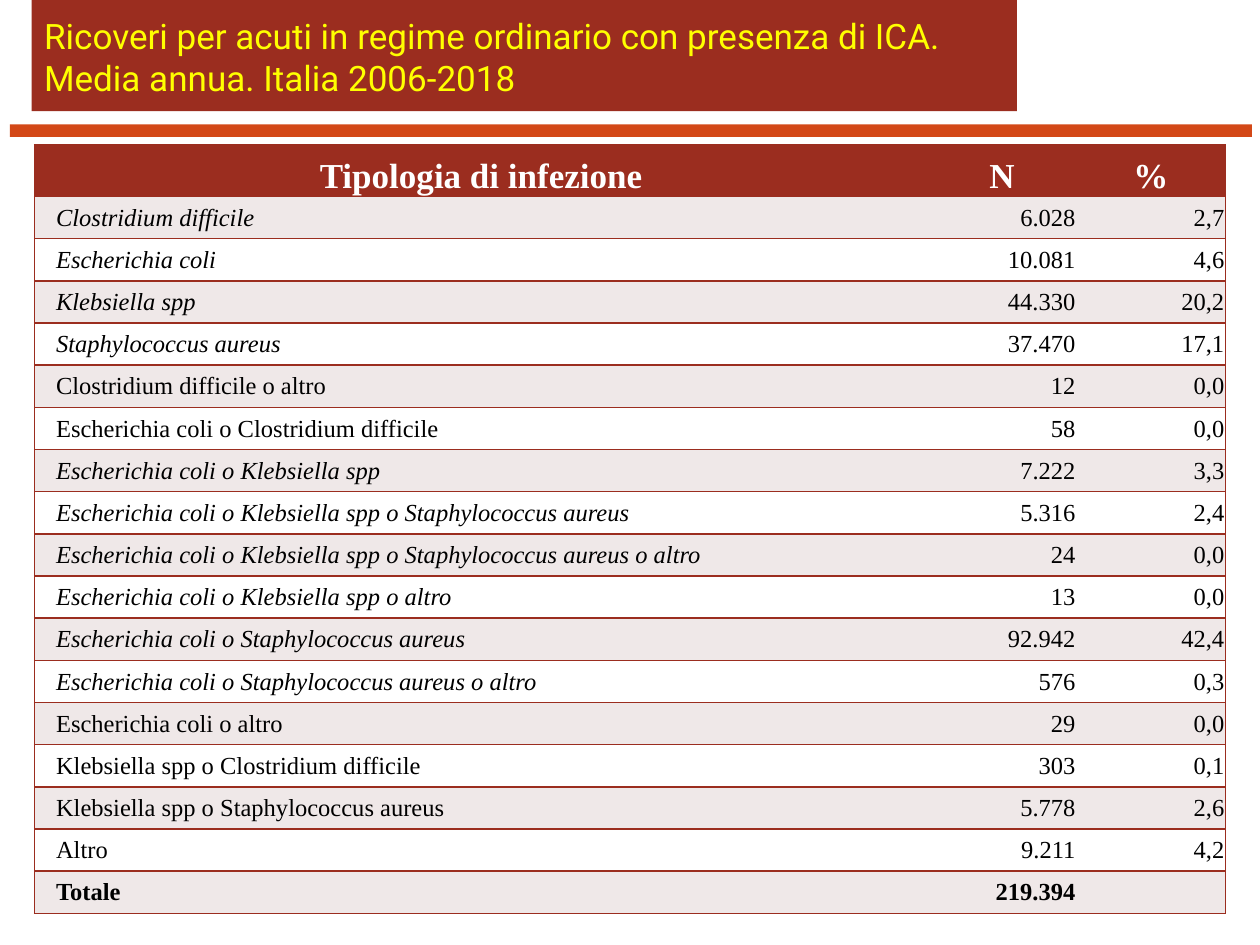
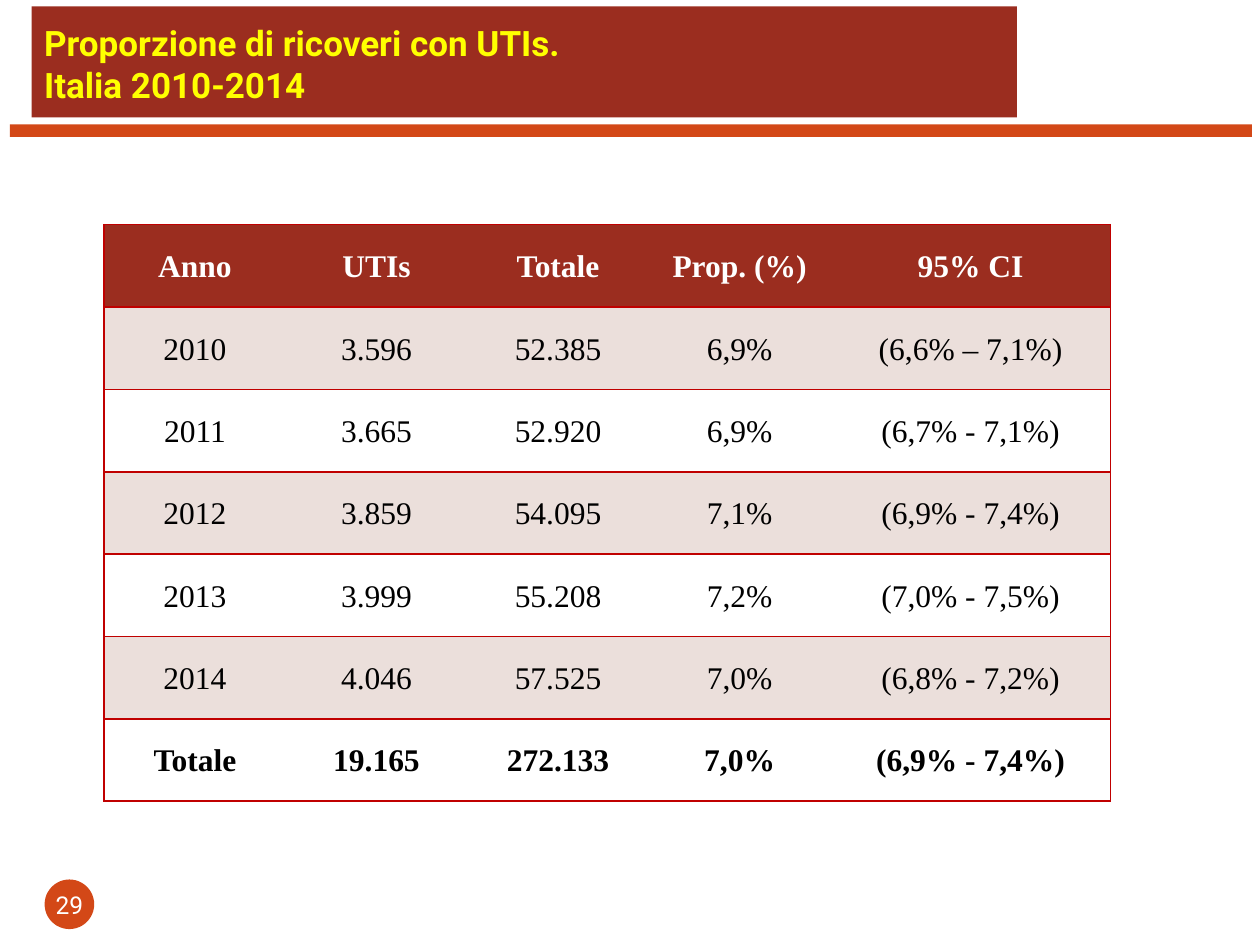
from lxml import etree
from pptx import Presentation
from pptx.dml.color import RGBColor
from pptx.enum.shapes import MSO_SHAPE as SHAPE
from pptx.enum.text import MSO_ANCHOR as ANCHOR, PP_ALIGN as ALIGN
from pptx.oxml.ns import qn
from pptx.util import Cm, Pt

BRICK, ORANGE, YELLOW = "9B2D1F", "D34817", "FFFF00"
RED, WHITE, BLACK = "C00000", "FFFFFF", "000000"
SANS, SERIF = "Roboto", "Times New Roman"

INFECTIONS = [
    ("Tipologia di infezione", "N", "%"),
    ("Clostridium difficile", "6.028", "2,7"),
    ("Escherichia coli", "10.081", "4,6"),
    ("Klebsiella spp", "44.330", "20,2"),
    ("Staphylococcus aureus", "37.470", "17,1"),
    ("Clostridium difficile o altro", "12", "0,0"),
    ("Escherichia coli o Clostridium difficile", "58", "0,0"),
    ("Escherichia coli o Klebsiella spp", "7.222", "3,3"),
    ("Escherichia coli o Klebsiella spp o Staphylococcus aureus", "5.316", "2,4"),
    ("Escherichia coli o Klebsiella spp o Staphylococcus aureus o altro", "24", "0,0"),
    ("Escherichia coli o Klebsiella spp o altro", "13", "0,0"),
    ("Escherichia coli o Staphylococcus aureus", "92.942", "42,4"),
    ("Escherichia coli o Staphylococcus aureus o altro", "576", "0,3"),
    ("Escherichia coli o altro", "29", "0,0"),
    ("Klebsiella spp o Clostridium difficile", "303", "0,1"),
    ("Klebsiella spp o Staphylococcus aureus", "5.778", "2,6"),
    ("Altro", "9.211", "4,2"),
    ("Totale", "219.394", ""),
]
ITALIC_ROWS = {*range(1, 5), *range(7, 13)}

UTIS = [
    ("Anno", "UTIs", "Totale", "Prop. (%)", "95% CI"),
    ("2010", "3.596", "52.385", "6,9%", "(6,6% – 7,1%)"),
    ("2011", "3.665", "52.920", "6,9%", "(6,7% - 7,1%)"),
    ("2012", "3.859", "54.095", "7,1%", "(6,9% - 7,4%)"),
    ("2013", "3.999", "55.208", "7,2%", "(7,0% - 7,5%)"),
    ("2014", "4.046", "57.525", "7,0%", "(6,8% - 7,2%)"),
    ("Totale", "19.165", "272.133", "7,0%", "(6,9% - 7,4%)"),
]


def rgb(color):
    return RGBColor.from_string(color)


def format_runs(p, size, color, font, bold=False, italic=False):
    for r in p.runs:
        f = r.font
        f.size, f.name, f.bold, f.italic = Pt(size), font, bold, italic
        f.color.rgb = rgb(color)


def set_margins(box, left, top, right, bottom):
    """Set the insets of a text frame or a table cell, in cm."""
    box.margin_left, box.margin_top = Cm(left), Cm(top)
    box.margin_right, box.margin_bottom = Cm(right), Cm(bottom)


def add_block(s, shape, fill, left, top, width, height):
    sp = s.shapes.add_shape(shape, Cm(left), Cm(top), Cm(width), Cm(height))
    sp.shadow.inherit = False
    sp.fill.solid()
    sp.fill.fore_color.rgb = rgb(fill)
    sp.line.fill.background()
    return sp


def add_title_slide(prs, title, title_top, bold):
    """Add a slide with the orange rule and the title band."""
    s = prs.slides.add_slide(prs.slide_layouts[6])
    add_block(s, SHAPE.RECTANGLE, ORANGE, 0.2, 2.51, 25.04, 0.25)
    tf = add_block(s, SHAPE.RECTANGLE, BRICK, 0.64, title_top, 19.86, 2.24).text_frame
    set_margins(tf, 0.25, 0.13, 0.25, 0.25)
    tf.word_wrap = True
    tf.vertical_anchor = ANCHOR.BOTTOM
    tf.text = title
    p = tf.paragraphs[0]
    p.alignment = ALIGN.LEFT
    format_runs(p, 20, YELLOW, SANS, bold)
    return s


def set_borders(cell, **colors):
    """Draw the sides L, R, T, B in the given colours; None hides a side."""
    tcPr = cell._tc.get_or_add_tcPr()
    for side in "LRTB":
        ln = etree.SubElement(tcPr, qn(f"a:ln{side}"), w=str(Pt(1)))
        if colors[side]:
            fill = etree.SubElement(ln, qn("a:solidFill"))
            etree.SubElement(fill, qn("a:srgbClr"), val=colors[side])
        else:
            etree.SubElement(ln, qn("a:noFill"))


def add_grid(s, left, top, widths, heights, rows, stripe, rule):
    """Add a table with a dark header, striped rows, and no inner vertical lines."""
    table = s.shapes.add_table(len(rows), len(widths), Cm(left), Cm(top),
                               Cm(sum(widths)), Cm(sum(heights))).table
    for col, width in zip(table.columns, widths):
        col.width = Cm(width)
    last = len(widths) - 1
    for i, (row, height, texts) in enumerate(zip(table.rows, heights, rows)):
        row.height = Cm(height)
        for j, (cell, text) in enumerate(zip(row.cells, texts)):
            set_borders(cell, L=None if j else rule, R=rule if j == last else None,
                        T=rule, B=rule)
            cell.fill.solid()
            cell.fill.fore_color.rgb = rgb(BRICK if i == 0 else stripe if i % 2 else WHITE)
            cell.vertical_anchor = ANCHOR.MIDDLE
            cell.text = text
            cell.text_frame.paragraphs[0].alignment = ALIGN.CENTER
    return table


def add_infection_table(s, left, top):
    heights = [1.04] + [0.85] * (len(INFECTIONS) - 1)
    table = add_grid(s, left, top, [18, 3, 3], heights, INFECTIONS, "EFE8E8", BRICK)
    for i, row in enumerate(table.rows):
        for j, cell in enumerate(row.cells):
            p = cell.text_frame.paragraphs[0]
            set_margins(cell, 0.02, 0.02, 0.02, 0)
            if i == 0:
                cell.vertical_anchor = ANCHOR.BOTTOM
                format_runs(p, 20, WHITE, SERIF, bold=True)
                continue
            if j == 0:
                cell.margin_left = Cm(0.43)
            p.alignment = ALIGN.RIGHT if j else ALIGN.LEFT
            format_runs(p, 14, BLACK, SERIF, bold=i == len(INFECTIONS) - 1,
                        italic=j == 0 and i in ITALIC_ROWS)


def add_uti_table(s, left, top):
    heights = [1.66] * len(UTIS)
    table = add_grid(s, left, top, [3.66] * 4 + [5.65], heights, UTIS, "EBDFDB", RED)
    for i, row in enumerate(table.rows):
        for cell in row.cells:
            set_margins(cell, 0.13, 0, 0.13, 0)
            p = cell.text_frame.paragraphs[0]
            p.line_spacing = 1.07
            format_runs(p, 18, BLACK if i else WHITE, SERIF,
                        bold=i in (0, len(UTIS) - 1))


def add_page_number(s, number, left, top):
    tf = add_block(s, SHAPE.OVAL, ORANGE, left, top, 1, 1).text_frame
    set_margins(tf, 0, 0, 0, 0)
    tf.word_wrap = False
    tf.vertical_anchor = ANCHOR.MIDDLE
    tf.text = number
    p = tf.paragraphs[0]
    p.alignment = ALIGN.CENTER
    format_runs(p, 14, WHITE, SANS)


def main():
    prs = Presentation()
    prs.slide_width, prs.slide_height = Cm(25.4), Cm(19.05)

    s = add_title_slide(prs, "Ricoveri per acuti in regime ordinario con presenza di ICA.\v"
                             "Media annua. Italia 2006-2018", 0, bold=False)
    add_infection_table(s, 0.7, 2.92)

    s = add_title_slide(prs, "Proporzione di ricoveri con UTIs.\vItalia 2010-2014",
                        0.13, bold=True)
    add_uti_table(s, 2.1, 4.53)
    add_page_number(s, "29", 0.9, 17.73)

    prs.save("out.pptx")


if __name__ == "__main__":
    main()
